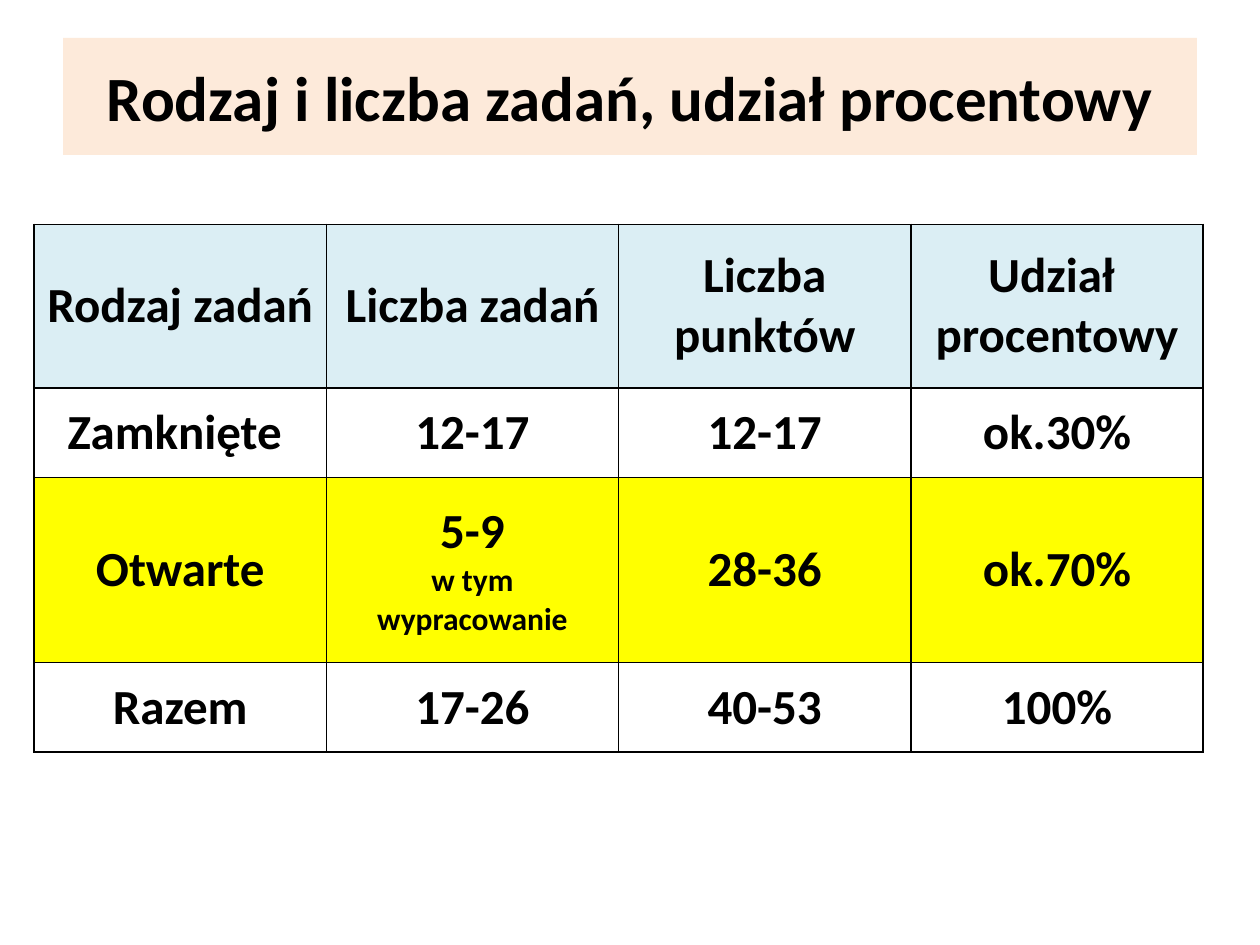
"""Build a slide with a table of task types, their numbers and percentage shares."""
from dataclasses import dataclass

from lxml import etree
from pptx import Presentation
from pptx.dml.color import RGBColor
from pptx.enum import text
from pptx.oxml import ns
from pptx.util import Inches, Pt

FONT = "Calibri"
BLACK = "000000"
COL_WIDTH = 2.32


@dataclass
class Row:
    height: float
    fill: str
    cells: list[str]


ROWS = [
    Row(1.3, "DBEEF4", ["Rodzaj zadań", "Liczba zadań", "Liczba punktów", "Udział  procentowy"]),
    Row(0.71, "FFFFFF", ["Zamknięte ", "12-17", "12-17", "ok.30%"]),
    Row(1.47, "FFFF00", ["Otwarte", "5-9\nw tym wypracowanie", "28-36", "ok.70%"]),
    Row(0.71, "FFFFFF", ["Razem", "17-26", "40-53", "100%"]),
]


def set_fill(item, color: str) -> None:
    item.fill.solid()
    item.fill.fore_color.rgb = RGBColor.from_string(color)


def add_line(p, line: str, size: int) -> None:
    p.alignment = text.PP_ALIGN.CENTER
    r = p.add_run()
    r.text = line
    r.font.name = FONT
    r.font.size = Pt(size)
    r.font.bold = True
    r.font.color.rgb = RGBColor.from_string(BLACK)


def set_borders(cell) -> None:
    props = cell._tc.get_or_add_tcPr()
    for i, side in enumerate(("lnL", "lnR", "lnT", "lnB")):
        ln = etree.Element(ns.qn(f"a:{side}"), w=str(Pt(1)))
        fill = etree.SubElement(ln, ns.qn("a:solidFill"))
        etree.SubElement(fill, ns.qn("a:srgbClr"), val=BLACK)
        props.insert(i, ln)


def add_title(s, title: str) -> None:
    sp = s.shapes.title
    sp.left, sp.top, sp.width, sp.height = map(Inches, (0.5, 0.3, 9, 0.93))
    set_fill(sp, "FDEADA")
    tf = sp.text_frame
    tf.vertical_anchor = text.MSO_ANCHOR.MIDDLE
    add_line(tf.paragraphs[0], title, 36)


def fill_cell(cell, content: str, color: str) -> None:
    set_fill(cell, color)
    set_borders(cell)
    cell.vertical_anchor = text.MSO_ANCHOR.MIDDLE
    tf = cell.text_frame
    main, *notes = content.split("\n")
    add_line(tf.paragraphs[0], main, 28)
    for note in notes:
        add_line(tf.add_paragraph(), note, 18)


def add_task_table(s, rows: list[Row]) -> None:
    cols = len(rows[0].cells)
    height = sum(row.height for row in rows)
    table = s.shapes.add_table(len(rows), cols, Inches(0.27), Inches(1.78),
                               Inches(cols * COL_WIDTH), Inches(height)).table
    table.horz_banding = False
    for col in table.columns:
        col.width = Inches(COL_WIDTH)
    for i, row in enumerate(rows):
        table.rows[i].height = Inches(row.height)
        for j, content in enumerate(row.cells):
            fill_cell(table.cell(i, j), content, row.fill)


def main() -> None:
    prs = Presentation()
    prs.slide_width, prs.slide_height = Inches(10), Inches(7.5)
    s = prs.slides.add_slide(prs.slide_layouts[5])
    add_title(s, "Rodzaj i liczba zadań, udział procentowy")
    add_task_table(s, ROWS)
    prs.save("out.pptx")


if __name__ == "__main__":
    main()
